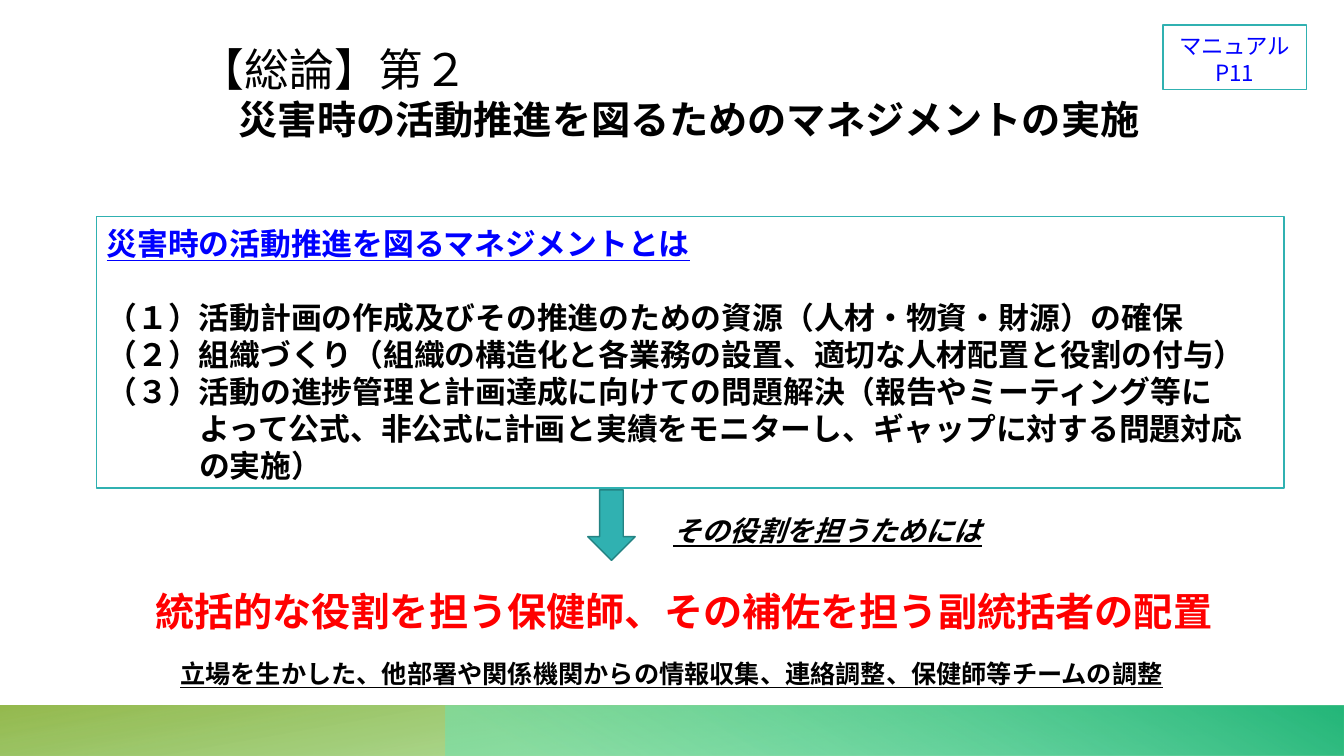
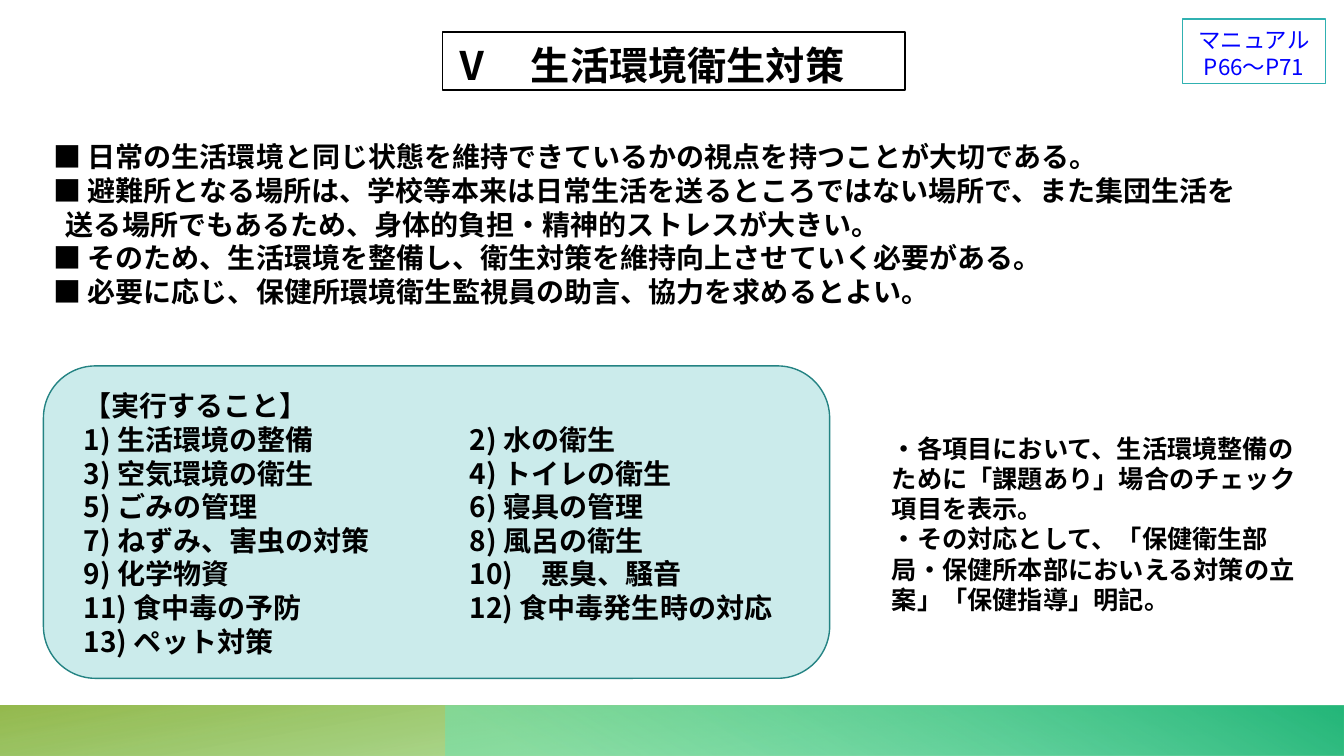
from pptx import Presentation
from pptx.dml.color import RGBColor
from pptx.enum.shapes import MSO_SHAPE
from pptx.enum.text import MSO_ANCHOR, MSO_AUTO_SIZE, PP_ALIGN
from pptx.oxml.ns import qn
from pptx.oxml.xmlchemy import OxmlElement
from pptx.util import Inches, Pt

RECT, ROUND, ARROW = MSO_SHAPE.RECTANGLE, MSO_SHAPE.ROUNDED_RECTANGLE, MSO_SHAPE.DOWN_ARROW
LEFT, CENTER = PP_ALIGN.LEFT, PP_ALIGN.CENTER
TOP, NO_FIT = MSO_ANCHOR.TOP, MSO_AUTO_SIZE.NONE

# Shared look
WIDTH, HEIGHT = Inches(13.33), Inches(7.5)
FONT, NOTE_FONT = "Noto Sans CJK JP", "Roboto"
BLACK, BLUE, RED, WHITE = "000000", "0000FF", "FF0000", "FFFFFF"
TEAL, DARK_TEAL = "30B1B1", "248383"
TITLE_SIZE = 28
LEADING = 1.2  # line height as a multiple of the text size
BAND_TOP, BAND_HEIGHT = 93.33, 6.67
TITLE_ONLY = 5

# Wording
MANAGEMENT_ITEMS = [
    ("（１）活動計画の作成及びその推進のための資源（人材・物資・財源）の確保", 0),
    ("（２）組織づくり（組織の構造化と各業務の設置、適切な人材配置と役割の付与）", 0),
    ("（３）活動の進捗管理と計画達成に向けての問題解決（報告やミーティング等に", 0),
    ("よって公式、非公式に計画と実績をモニターし、ギャップに対する問題対応", 3),
    ("の実施）", 3),
]
HYGIENE_POINTS = [
    ("■ 日常の生活環境と同じ状態を維持できているかの視点を持つことが大切である。", 0),
    ("■ 避難所となる場所は、学校等本来は日常生活を送るところではない場所で、また集団生活を", 0),
    ("送る場所でもあるため、身体的負担・精神的ストレスが大きい。", 0.45),
    ("■ そのため、生活環境を整備し、衛生対策を維持向上させていく必要がある。", 0),
    ("■ 必要に応じ、保健所環境衛生監視員の助言、協力を求めるとよい。", 0),
]
ACTIONS = [
    "1) 生活環境の整備", "2) 水の衛生",
    "3) 空気環境の衛生", "4) トイレの衛生",
    "5) ごみの管理", "6) 寝具の管理",
    "7) ねずみ、害虫の対策", "8) 風呂の衛生",
    "9) 化学物資", "10)　悪臭、騒音",
    "11) 食中毒の予防", "12) 食中毒発生時の対応",
    "13) ペット対策",
]
NOTES = [
    "・各項目において、生活環境整備のために「課題あり」場合のチェック項目を表示。",
    "・その対応として、「保健衛生部局・保健所本部においえる対策の立案」「保健指導」明記。",
]


def rgb(value):
    return RGBColor.from_string(value)


def area(x, y, w, h):
    """Turn percentages of the slide into left, top, width, height."""
    return (int(WIDTH * x / 100), int(HEIGHT * y / 100),
            int(WIDTH * w / 100), int(HEIGHT * h / 100))


def set_alpha(color, percent):
    alpha = OxmlElement("a:alpha")
    alpha.set("val", str(percent * 1000))
    color.append(alpha)


# Shapes
def outline(sp, color, width=1):
    sp.line.color.rgb = rgb(color)
    sp.line.width = Pt(width)


def add_box(s, kind, box, fill=None, line=None, alpha=None):
    sp = s.shapes.add_shape(kind, *area(*box))
    sp.shadow.inherit = False
    if fill:
        sp.fill.solid()
        sp.fill.fore_color.rgb = rgb(fill)
        if alpha:
            set_alpha(sp.element.spPr.find(".//" + qn("a:srgbClr")), alpha)
    else:
        sp.fill.background()
    if line:
        outline(sp, line)
    else:
        sp.line.fill.background()
    return sp


def add_band(s, x, stops, angle, rotation=0):
    """Footer band from x to the right edge; stops are (position, colour, opacity)."""
    sp = add_box(s, RECT, (x, BAND_TOP, 100 - x, BAND_HEIGHT))
    sp.rotation = rotation
    sp.element.spPr.find(qn("a:xfrm")).set("flipH", "1")
    sp.fill.gradient()
    sp.fill.gradient_angle = 360 - angle
    for stop, (position, color, _) in zip(sp.fill.gradient_stops, stops):
        stop.position = position / 100
        stop.color.rgb = rgb(color)
    for color, (_, _, opacity) in zip(sp.element.spPr.iter(qn("a:srgbClr")), stops):
        set_alpha(color, opacity)
    return sp


# Text
def prepare_frame(sp, size):
    tf = sp.text_frame
    tf.word_wrap = True
    tf.auto_size = NO_FIT
    tf.vertical_anchor = TOP
    tf.margin_left = tf.margin_right = Inches(0.1)
    tf.margin_top = Inches(0.05) + Pt(size * 0.1)
    tf.margin_bottom = 0
    return tf


def add_line(tf, text, size, color=BLACK, bold=True, italic=False,
             underline=False, font=FONT, align=LEFT, indent=0):
    """Write one paragraph; indent counts characters of its own size."""
    p = tf.paragraphs[0]
    if p.runs:
        p = tf.add_paragraph()
    p.alignment = align
    p.line_spacing = Pt(size * LEADING)
    if indent:
        p_pr = p._p.get_or_add_pPr()
        p_pr.set("marL", str(int(Pt(size * indent))))
        p_pr.set("indent", "0")
    r = p.add_run()
    r.text = text
    f = r.font
    f.size, f.bold, f.italic, f.underline = Pt(size), bold, italic, underline
    f.color.rgb = rgb(color)
    f.name = font
    east_asian = OxmlElement("a:ea")
    east_asian.set("typeface", font)
    r._r.get_or_add_rPr().append(east_asian)
    return p


def add_tab(p, position):
    tabs, tab = OxmlElement("a:tabLst"), OxmlElement("a:tab")
    tab.set("pos", str(int(position)))
    tab.set("algn", "l")
    tabs.append(tab)
    p._p.get_or_add_pPr().append(tabs)


def add_text(s, box, size):
    return prepare_frame(s.shapes.add_textbox(*area(*box)), size)


def place_title(s, box, size):
    sp = s.shapes.title
    sp.left, sp.top, sp.width, sp.height = area(*box)
    return sp, prepare_frame(sp, size)


def add_manual_badge(s, x, y, pages, fill=None):
    sp = add_box(s, RECT, (x, y, 10.65, 8.53), fill, TEAL)
    add_line(prepare_frame(sp, 16), "マニュアル" + pages, 16, BLUE, bold=False, align=CENTER)


# Slides
def put_bands_on_layout(s, layout):
    bands = [
        add_band(s, 0, [(14, "4AB826", 28), (100, "83AD2F", 85)], 100, 180),
        add_band(s, 33.15, [(9, "6EE2B1", 55), (99, "25B77A", 100)], 240),
    ]
    for band in bands:
        layout.shapes.element.append(band.element)


def build_management(s):
    _, tf = place_title(s, (14.1, 4.27, 76.28, 14.8), 32)
    add_line(tf, "【総論】第２", 32, bold=False)
    add_line(tf, "災害時の活動推進を図るためのマネジメントの実施", TITLE_SIZE, indent=1)

    # Definition
    sp = add_box(s, RECT, (7.2, 28.67, 88.35, 35.87), line=TEAL)
    tf = prepare_frame(sp, 22)
    p = add_line(tf, "災害時の活動推進を図るマネジメントとは", 22, BLUE, underline=True)
    p.space_after = Pt(22 * LEADING)
    for text, indent in MANAGEMENT_ITEMS:
        add_line(tf, text, 22, indent=indent)

    # Consequence
    add_box(s, ARROW, (43.73, 64.8, 3.53, 9.33), TEAL, DARK_TEAL)
    add_line(add_text(s, (10.8, 76.53, 83.03, 7.6), 28),
             "統括的な役割を担う保健師、その補佐を担う副統括者の配置", 28, RED)
    add_line(add_text(s, (49.35, 66.93, 30.75, 5.87), 20),
             "その役割を担うためには", 20, italic=True, underline=True)
    add_line(add_text(s, (12.68, 86.13, 79.2, 5.33), 18),
             "立場を生かした、他部署や関係機関からの情報収集、連絡調整、保健師等チームの調整",
             18, underline=True)
    add_manual_badge(s, 86.55, 3.33, "P11")


def build_hygiene(s):
    sp, tf = place_title(s, (32.93, 4.27, 34.43, 7.6), TITLE_SIZE)
    outline(sp, BLACK, 1.25)
    add_line(tf, "Ⅴ　生活環境衛生対策", TITLE_SIZE)

    tf = add_text(s, (3.23, 17.47, 90.98, 23.73), 20)
    for text, indent in HYGIENE_POINTS:
        add_line(tf, text, 20, indent=indent)

    # Actions, two to a line
    add_box(s, ROUND, (3.23, 48.4, 58.5, 41.33), TEAL, DARK_TEAL, alpha=25)
    tf = add_text(s, (5.48, 50.4, 54.6, 37.2), 20)
    add_line(tf, "【実行すること】", 20)
    for i in range(0, len(ACTIONS), 2):
        p = add_line(tf, "\t".join(ACTIONS[i:i + 2]), 20)
        add_tab(p, Inches(3.83))

    tf = add_text(s, (65.63, 56.27, 31.95, 25.6), 18)
    for text in NOTES:
        add_line(tf, text, 18, font=NOTE_FONT)
    add_manual_badge(s, 87.98, 2.53, "P66～P71", WHITE)


def main():
    prs = Presentation()
    prs.slide_width, prs.slide_height = WIDTH, HEIGHT
    layout = prs.slide_layouts[TITLE_ONLY]
    first, second = (prs.slides.add_slide(layout) for _ in range(2))
    put_bands_on_layout(first, layout)
    build_management(first)
    build_hygiene(second)
    prs.save("out.pptx")


if __name__ == "__main__":
    main()
